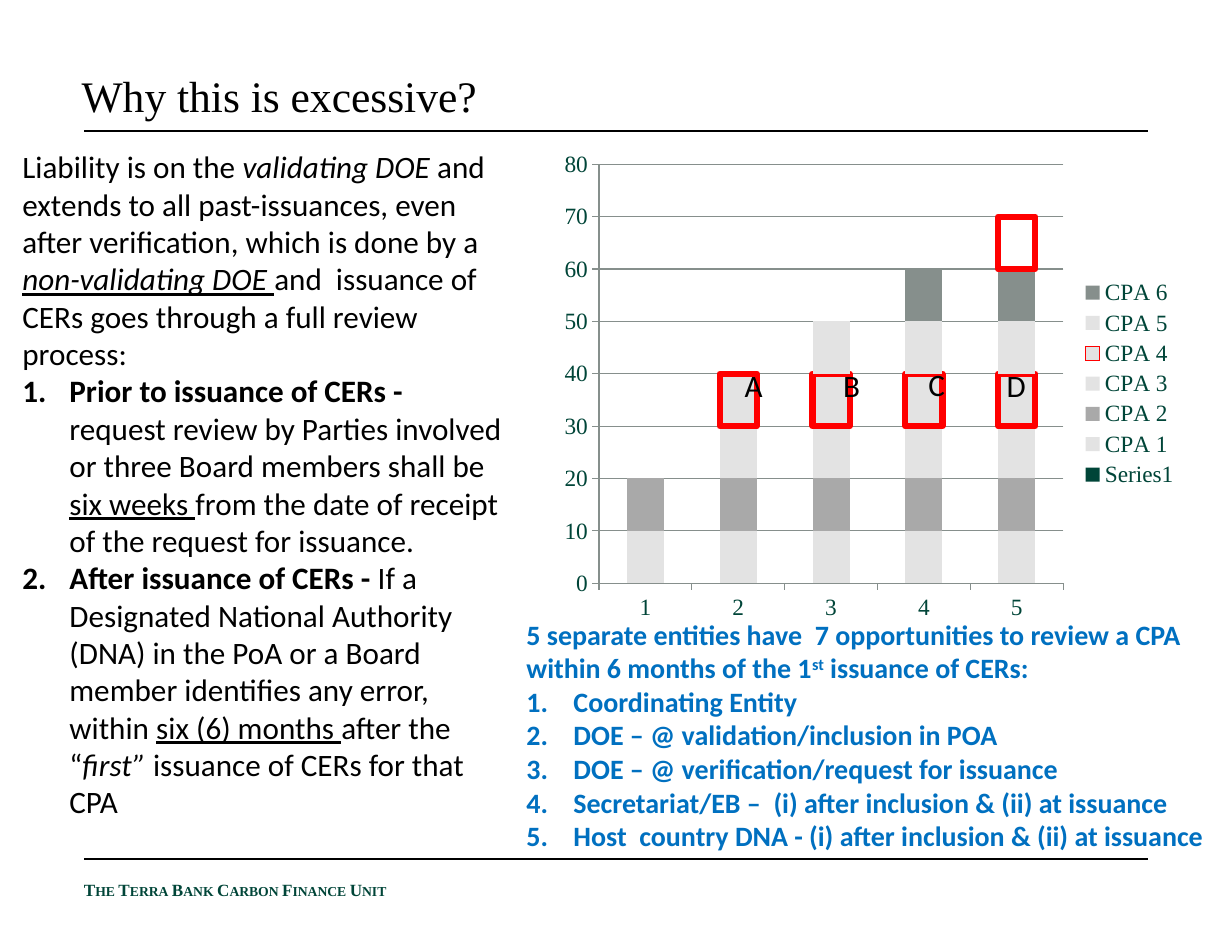
from dataclasses import dataclass
from typing import NamedTuple, Optional

from lxml.etree import SubElement
from pptx import Presentation
from pptx.chart.data import CategoryChartData
from pptx.dml.color import RGBColor
from pptx.enum.chart import XL_CHART_TYPE as ChartType
from pptx.enum.chart import XL_LEGEND_POSITION as LegendPosition
from pptx.enum.chart import XL_TICK_MARK as TickMark
from pptx.enum.shapes import MSO_CONNECTOR as Connector
from pptx.enum.text import MSO_ANCHOR as Anchor
from pptx.oxml import parse_xml
from pptx.oxml.ns import nsdecls, qn
from pptx.util import Inches, Pt

BLACK = RGBColor(0x00, 0x00, 0x00)
WHITE = RGBColor(0xFF, 0xFF, 0xFF)
GREEN = RGBColor(0x00, 0x45, 0x38)
BLUE = RGBColor(0x00, 0x70, 0xC0)
RED = RGBColor(0xFF, 0x00, 0x00)
PALE = RGBColor(0xE3, 0xE3, 0xE3)
SILVER = RGBColor(0xA9, 0xA9, 0xA9)
SLATE = RGBColor(0x86, 0x8F, 0x8C)
SERIF, SANS = "Times New Roman", "Calibri"
HANGING = Inches(0.42)


class Span(NamedTuple):
    text: str
    bold: bool = False
    italic: bool = False
    underline: bool = False
    raised: bool = False


class Para(NamedTuple):
    spans: list[Span]
    numbered: bool = False


@dataclass(frozen=True)
class Activity:
    name: str
    first_period: int
    fill: RGBColor
    outlined: bool = False


class Mark(NamedTuple):
    letter: str
    left: float
    top: float


PERIODS = range(1, 6)
ACTIVITIES = [
    Activity("Series1", 6, GREEN),
    Activity("CPA 1", 1, PALE),
    Activity("CPA 2", 1, SILVER),
    Activity("CPA 3", 2, PALE),
    Activity("CPA 4", 2, PALE, outlined=True),
    Activity("CPA 5", 3, PALE),
    Activity("CPA 6", 4, SLATE),
    Activity("Series 8", 5, WHITE, outlined=True),
]
MARKS = [Mark("A", 6.55, 3.22), Mark("B", 7.43, 3.22), Mark("C", 8.19, 3.21), Mark("D", 8.89, 3.22)]
LIABILITY = [
    Para([
        Span("Liability is on the "),
        Span("validating DOE ", italic=True),
        Span("and extends to all past-issuances, even after verification, which is done by a "),
        Span("non-validating DOE ", italic=True, underline=True),
        Span("and  issuance of CERs goes through a full review process:"),
    ]),
    Para([
        Span("Prior to issuance of CERs -  ", bold=True),
        Span("request review by Parties involved or three Board members shall be "),
        Span("six weeks ", underline=True),
        Span("from the date of receipt of the request for issuance."),
    ], numbered=True),
    Para([
        Span("After issuance of CERs - ", bold=True),
        Span("If a Designated National Authority (DNA) in the PoA or a Board member "
             "identifies any error, within "),
        Span("six (6) months ", underline=True),
        Span("after the “"),
        Span("first” ", italic=True),
        Span("issuance of CERs for that CPA"),
    ], numbered=True),
]
REVIEWERS = [
    "Coordinating Entity",
    "DOE – @ validation/inclusion in POA",
    "DOE – @ verification/request for issuance",
    "Secretariat/EB –  (i) after inclusion & (ii) at issuance",
    "Host  country DNA - (i) after inclusion & (ii) at issuance",
]
OPPORTUNITIES = [
    Para([
        Span("5 separate entities have  7 opportunities to review a CPA within 6 months of the 1", bold=True),
        Span("st", bold=True, raised=True),
        Span(" issuance of CERs:", bold=True),
    ]),
    *(Para([Span(reviewer, bold=True)], numbered=True) for reviewer in REVIEWERS),
]


def add_text(slide, paras: list[Para], left: float, top: float, width: float, height: float, *,
             size: float, font: str = SANS, color: RGBColor = BLACK, anchor: Anchor = Anchor.TOP,
             insets: tuple = (0.1, 0.05, 0.1, 0.05), wrap: bool = True, small_caps: bool = False) -> None:
    box = slide.shapes.add_textbox(Inches(left), Inches(top), Inches(width), Inches(height))
    frame = box.text_frame
    frame.word_wrap = wrap
    frame.vertical_anchor = anchor
    frame.margin_left, frame.margin_top, frame.margin_right, frame.margin_bottom = map(Inches, insets)
    for index, para in enumerate(paras):
        paragraph = frame.add_paragraph() if index else frame.paragraphs[0]
        if para.numbered:
            properties = paragraph._p.get_or_add_pPr()
            properties.set("marL", str(HANGING))
            properties.set("indent", str(-HANGING))
            SubElement(properties, qn("a:buFont"), typeface="+mj-lt")
            SubElement(properties, qn("a:buAutoNum"), type="arabicPeriod")
        for span in para.spans:
            run = paragraph.add_run()
            run.text = span.text
            run.font.name, run.font.size = font, Pt(size)
            run.font.color.rgb = color
            run.font.bold, run.font.italic, run.font.underline = span.bold, span.italic, span.underline
            if span.raised:
                run.font._element.set("baseline", "30000")
            if small_caps:
                run.font._element.set("cap", "small")


def add_rule(slide, top: float) -> None:
    rule = slide.shapes.add_connector(
        Connector.STRAIGHT, Inches(0.75), Inches(top), Inches(10.25), Inches(top))
    rule.line.color.rgb = BLACK
    rule.line.width = Pt(0.75)
    SubElement(rule._element.spPr, qn("a:effectLst"))


def add_issuance_chart(slide, activities: list[Activity]) -> None:
    data = CategoryChartData()
    data.categories = [str(period) for period in PERIODS]
    for activity in activities:
        data.add_series(activity.name,
                        [10 if period >= activity.first_period else None for period in PERIODS])
    chart = slide.shapes.add_chart(ChartType.COLUMN_STACKED, Inches(4.95), Inches(1.25),
                                   Inches(5.68), Inches(4.35), data).chart
    chart.has_title = False
    chart.font.name, chart.font.size = SERIF, Pt(15)
    chart.font.color.rgb = GREEN
    plot = chart.plots[0]
    plot.gap_width, plot.overlap = 150, 100
    plot.vary_by_categories = False
    for series, activity in zip(plot.series, activities):
        series.format.fill.solid()
        series.format.fill.fore_color.rgb = activity.fill
        if activity.outlined:
            series.format.line.color.rgb = RED
            series.format.line.width = Pt(4)
        else:
            series.format.line.fill.background()
    values = chart.value_axis
    values.minimum_scale, values.maximum_scale, values.major_unit = 0, 80, 10
    values.has_major_gridlines = True
    for axis in (values, chart.category_axis):
        axis.major_tick_mark = TickMark.CROSS if axis is values else TickMark.OUTSIDE
    for stroke in (values.format.line, values.major_gridlines.format.line, chart.category_axis.format.line):
        stroke.color.rgb = SLATE
        stroke.width = Pt(0.75)
    chart.has_legend = True
    chart.legend.position = LegendPosition.RIGHT
    chart.legend.include_in_layout = False
    chart.legend._element.find(qn("c:legendPos")).addnext(parse_xml(
        f'<c:legendEntry {nsdecls("c")}><c:idx val="{len(activities) - 1}"/><c:delete val="1"/></c:legendEntry>'))
    place_plot(chart, x=0.07, y=0.05, w=0.73, h=0.86)


def place_plot(chart, **fractions: Optional[float]) -> None:
    area = chart._chartSpace.chart.plotArea
    for old in area.findall(qn("c:layout")):
        area.remove(old)
    modes = '<c:layoutTarget val="inner"/><c:xMode val="edge"/><c:yMode val="edge"/>'
    sizes = "".join(f'<c:{key} val="{value}"/>' for key, value in fractions.items())
    area.insert(0, parse_xml(
        f'<c:layout {nsdecls("c")}><c:manualLayout>{modes}{sizes}</c:manualLayout></c:layout>'))


def main() -> None:
    """Build the slide on review opportunities and save it."""
    deck = Presentation()
    deck.slide_width, deck.slide_height = Inches(11), Inches(8.5)
    slide = deck.slides.add_slide(deck.slide_layouts[6])
    for top in (7.67, 1.17):
        add_rule(slide, top)
    add_text(slide, [Para([Span("The Terra Bank Carbon Finance Unit", bold=True)])], 0.75, 7.85, 9.23, 0.19,
             size=11, font=SERIF, color=GREEN, anchor=Anchor.MIDDLE, insets=(0, 0, 0.11, 0), small_caps=True)
    add_text(slide, [Para([Span("Why this is excessive?")])], 0.73, 0.57, 9.9, 0.57,
             size=28, font=SERIF, anchor=Anchor.BOTTOM, insets=(0, 0.06, 0, 0.06))
    body_insets = (0.11, 0.06, 0.11, 0.06)
    add_text(slide, LIABILITY, 0.09, 1.26, 4.5, 6.84, size=20, insets=body_insets)
    add_issuance_chart(slide, ACTIVITIES)
    for mark in MARKS:
        add_text(slide, [Para([Span(mark.letter)])], mark.left, mark.top, 0.32, 0.44, size=20, wrap=False)
    add_text(slide, OPPORTUNITIES, 4.59, 5.45, 6.51, 2.23, size=18, color=BLUE, insets=body_insets)
    deck.save("out.pptx")


if __name__ == "__main__":
    main()
